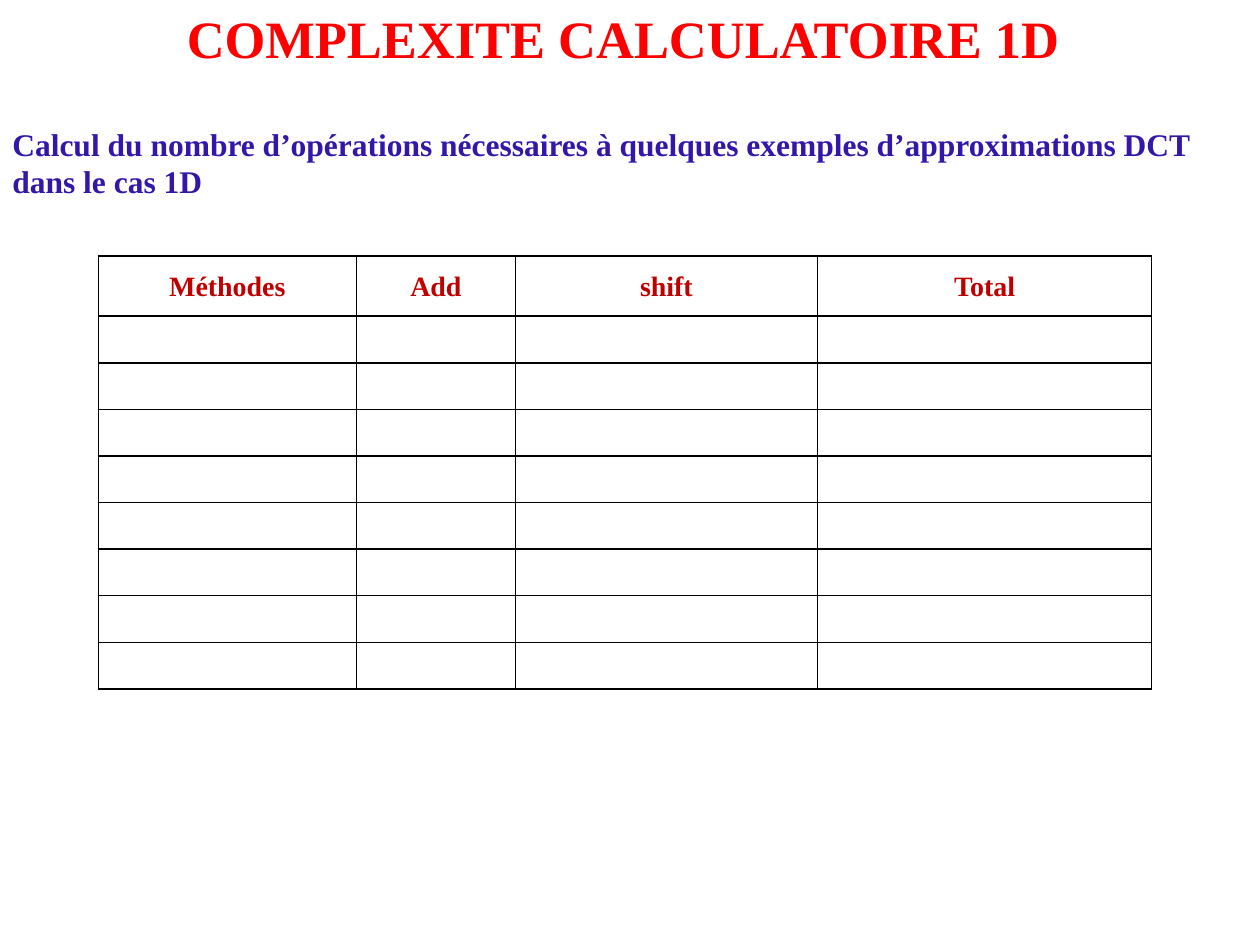
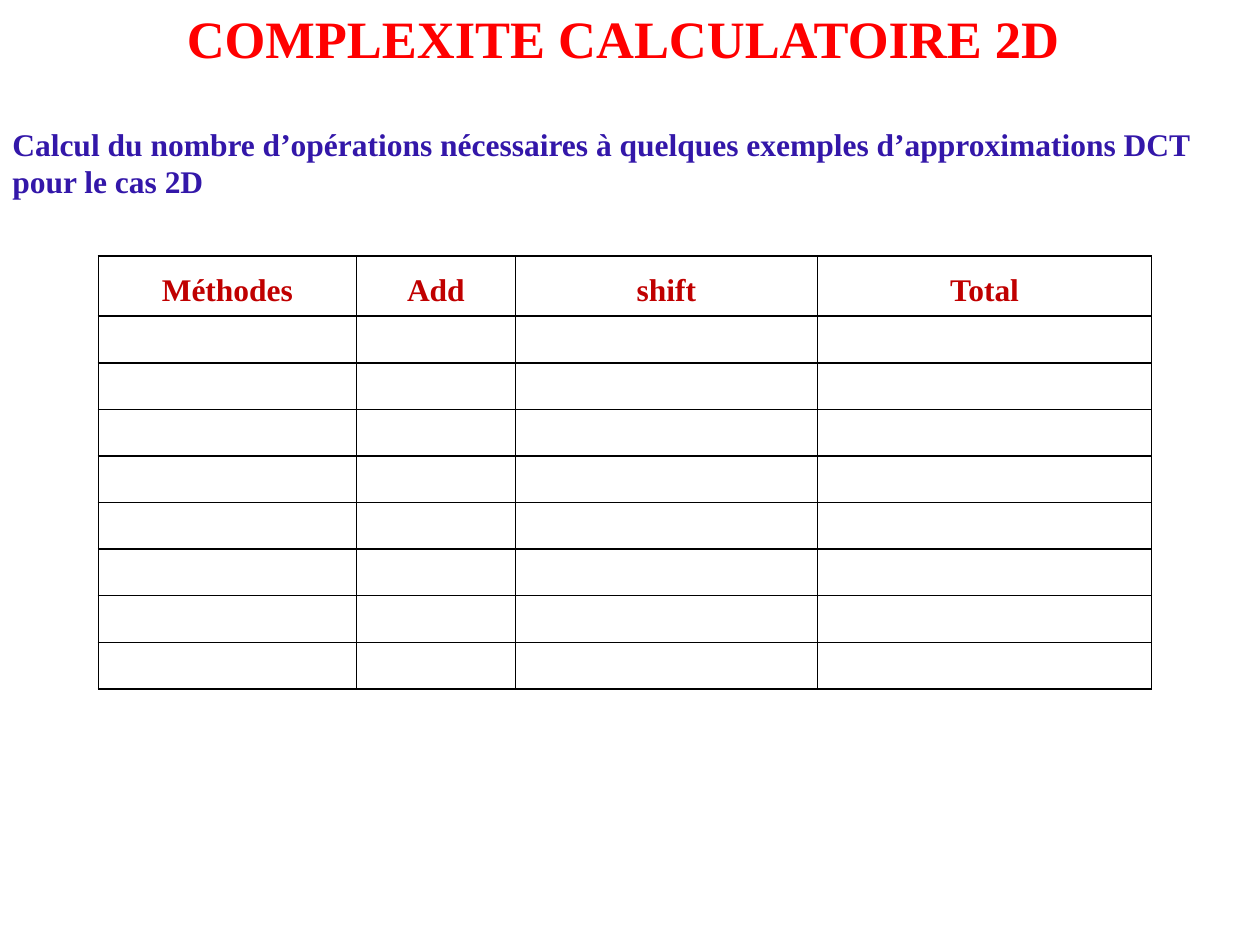
from dataclasses import dataclass

from lxml.etree import SubElement
from pptx import Presentation
from pptx.dml.color import RGBColor
from pptx.enum.text import MSO_AUTO_SIZE as AutoSize, PP_ALIGN as Align
from pptx.oxml.ns import qn
from pptx.slide import Slide
from pptx.table import _Cell as Cell
from pptx.text.text import _Paragraph as Paragraph
from pptx.util import Inches, Pt

FONT = "Times New Roman"
COLOURS = {
    "title": "FF0000",
    "subtitle": "3317A9",
    "header": "C00000",
    "border": "000000",
}
HEADERS = ["Méthodes", "Add", "shift", "Total"]
COLUMN_WIDTHS = [2.05, 1.26, 2.4, 2.65]
ROW_HEIGHTS = [0.48] + [0.37] * 8
BORDER_SIDES = ["a:lnL", "a:lnR", "a:lnT", "a:lnB"]


@dataclass(frozen=True)
class ComplexityPage:
    dimension: str
    preposition: str
    header_size: int


@dataclass(frozen=True)
class TextStyle:
    colour: str
    size: int
    align: Align


TITLE = TextStyle("title", 30, Align.CENTER)
SUBTITLE = TextStyle("subtitle", 18, Align.LEFT)

PAGES = [
    ComplexityPage("1D", "dans", 16),
    ComplexityPage("2D", "pour", 18),
]


def write(para: Paragraph, text: str, style: TextStyle) -> None:
    para.alignment = style.align
    span = para.add_run()
    span.text = text
    span.font.name = FONT
    span.font.size = Pt(style.size)
    span.font.bold = True
    span.font.color.rgb = RGBColor.from_string(COLOURS[style.colour])


def add_full_width_text(page: Slide, top: float, height: float,
                        text: str, style: TextStyle) -> None:
    box = page.shapes.add_textbox(0, Inches(top), Inches(10), Inches(height))
    frame = box.text_frame
    frame.word_wrap = True
    frame.auto_size = AutoSize.SHAPE_TO_FIT_TEXT
    write(frame.paragraphs[0], text, style)


def format_cell(cell: Cell) -> None:
    """Give the cell thin borders, narrow margins and no fill."""
    cell.margin_left = cell.margin_right = Inches(0.07)
    cell.margin_top = cell.margin_bottom = 0
    properties = cell._tc.get_or_add_tcPr()
    for side in BORDER_SIDES:
        line = SubElement(properties, qn(side), w=str(Pt(1)))
        fill = SubElement(line, qn("a:solidFill"))
        SubElement(fill, qn("a:srgbClr"), val=COLOURS["border"])
    cell.fill.background()


def add_operations_table(page: Slide, header_size: int) -> None:
    frame = page.shapes.add_table(
        len(ROW_HEIGHTS), len(COLUMN_WIDTHS), Inches(0.78), Inches(2.03),
        Inches(sum(COLUMN_WIDTHS)), Inches(sum(ROW_HEIGHTS)))
    table = frame.table
    table.first_row = table.horz_banding = False
    for column, width in zip(table.columns, COLUMN_WIDTHS):
        column.width = Inches(width)
    for row, height in zip(table.rows, ROW_HEIGHTS):
        row.height = Inches(height)
    for cell in table.iter_cells():
        format_cell(cell)
    header_style = TextStyle("header", header_size, Align.CENTER)
    for cell, header in zip(table.rows[0].cells, HEADERS):
        para = cell.text_frame.paragraphs[0]
        para.line_spacing = 1.5
        write(para, header, header_style)


def main() -> None:
    deck = Presentation()
    deck.slide_width, deck.slide_height = Inches(10), Inches(7.5)
    for content in PAGES:
        page = deck.slides.add_slide(deck.slide_layouts[6])
        add_full_width_text(
            page, 0, 0.61,
            f"COMPLEXITE CALCULATOIRE {content.dimension} ", TITLE)
        add_operations_table(page, content.header_size)
        add_full_width_text(
            page, 0.94, 0.71,
            "Calcul du nombre d’opérations nécessaires à quelques exemples "
            f"d’approximations DCT {content.preposition} le cas "
            f"{content.dimension}", SUBTITLE)
    deck.save("out.pptx")


if __name__ == "__main__":
    main()
